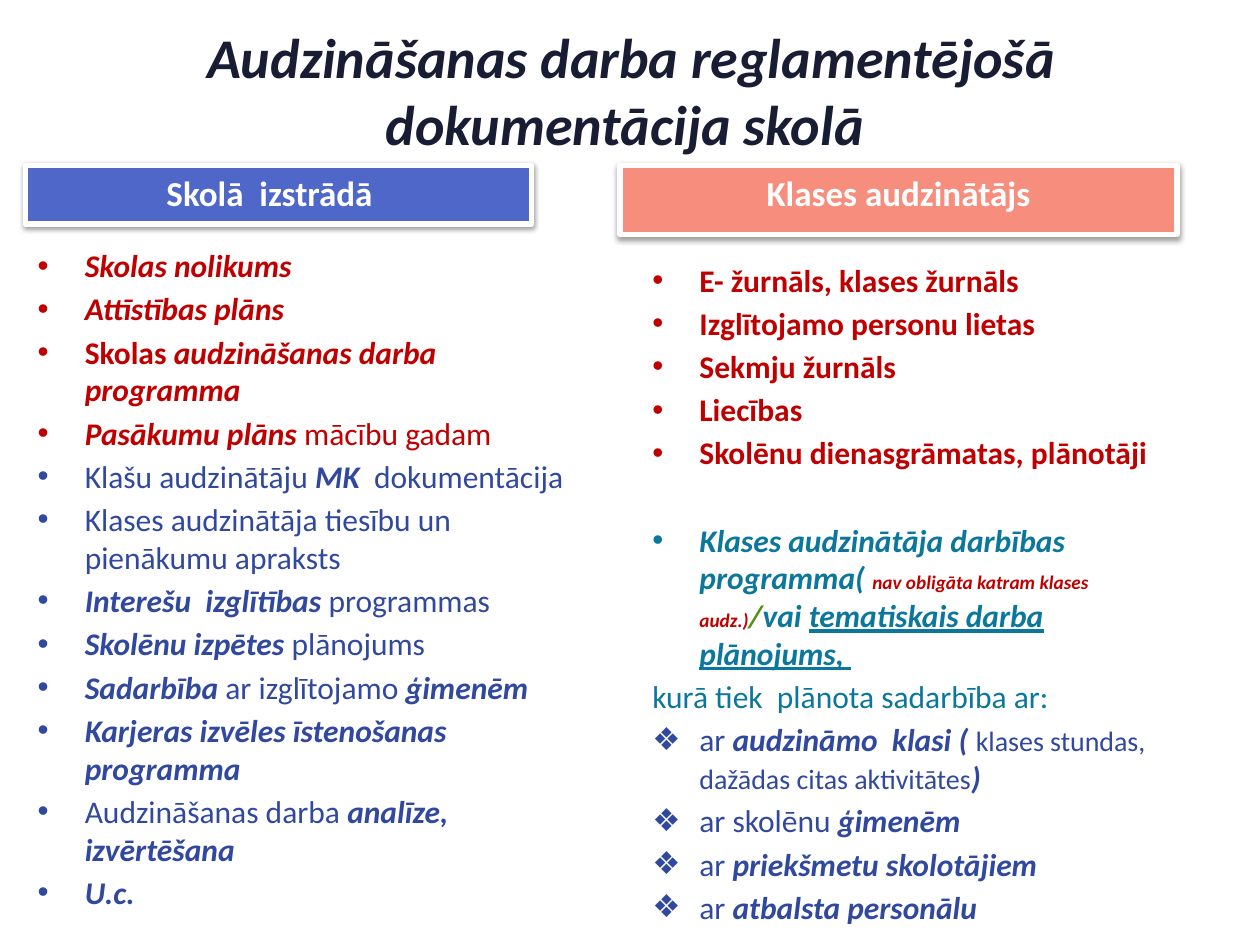
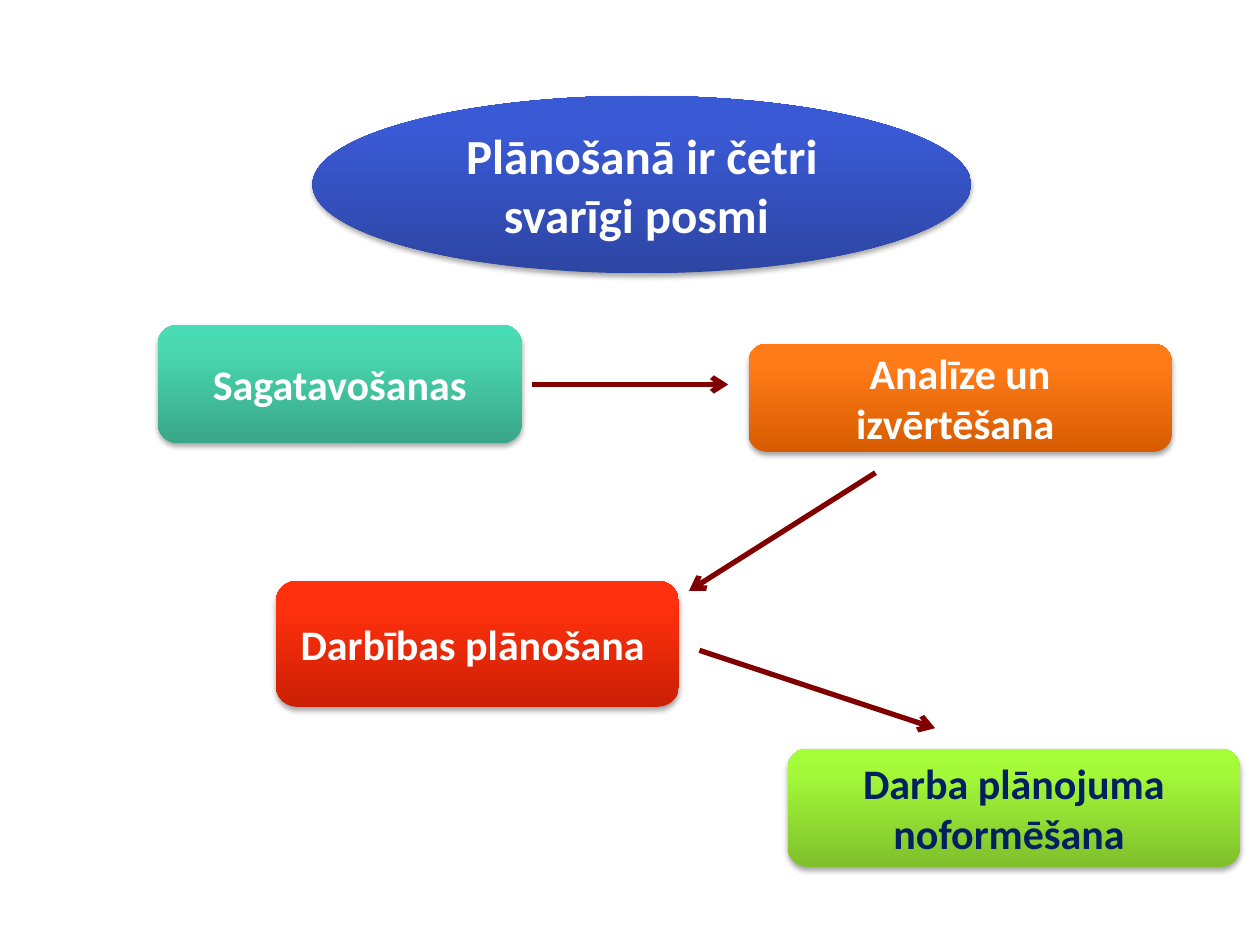
from dataclasses import dataclass
from functools import partial

from lxml import etree
from pptx import Presentation
from pptx.dml.color import RGBColor
from pptx.enum.shapes import MSO_CONNECTOR, MSO_SHAPE
from pptx.enum.text import MSO_ANCHOR, PP_ALIGN
from pptx.oxml.ns import qn
from pptx.util import Cm, Pt

RECTANGLE, ELLIPSE, ROUNDED = MSO_SHAPE.RECTANGLE, MSO_SHAPE.OVAL, MSO_SHAPE.ROUNDED_RECTANGLE
STRAIGHT = MSO_CONNECTOR.STRAIGHT
LEFT, CENTER = PP_ALIGN.LEFT, PP_ALIGN.CENTER
TOP, MIDDLE = MSO_ANCHOR.TOP, MSO_ANCHOR.MIDDLE

FONT = "Calibri"
COLORS = {
    "title": "191D34",
    "white": "FFFFFF",
    "black": "000000",
    "red": "C00000",
    "blue": "31489F",
    "teal": "0C779D",
    "green": "568D11",
    "navy": "002060",
    "arrow": "800000",
    "school": "4E67C8",
    "teacher": "F78D7C",
}
GRADIENTS = {
    "blue": ("2D45A3", "3A59D4", "3758D7"),
    "mint": ("39A688", "4AD8B1", "47DCB3"),
    "orange": ("D75C00", "FF7B18", "FF7C19"),
    "red": ("CB2004", "FF300D", "FF310F"),
    "lime": ("7FC02C", "A4F939", "A6FE36"),
}
GRADIENT_STOPS = (0, 80, 100)
HANGING = 0.95
ITEM_GAP = 3.1
SECTION_GAP = 28.2
DOT, DIAMOND = "•", "❖"


@dataclass(frozen=True)
class Box:
    """Position and size in centimetres."""
    left: float
    top: float
    width: float
    height: float

    def lengths(self) -> tuple:
        return Cm(self.left), Cm(self.top), Cm(self.width), Cm(self.height)


@dataclass(frozen=True)
class Run:
    text: str
    color: str
    bold: bool = False
    italic: bool = False
    size: float = 18
    underline: bool = False


@dataclass(frozen=True)
class Item:
    runs: tuple
    bullet: str = DOT
    gap: float = ITEM_GAP


@dataclass(frozen=True)
class Caption:
    box: Box
    text: str
    fill: str
    right_inset: float = 0.25


@dataclass(frozen=True)
class Stage:
    box: Box
    text: str
    gradient: str
    preset: int = ROUNDED
    size: float = 24
    color: str = "white"


@dataclass(frozen=True)
class Arrow:
    start: tuple
    end: tuple


def rgb(name: str) -> RGBColor:
    return RGBColor.from_string(COLORS[name])


def add_element(parent, tag: str, **attributes):
    return etree.SubElement(parent, qn(tag), attributes)


def add_run(paragraph, run: Run) -> None:
    text_run = paragraph.add_run()
    text_run.text = run.text
    font = text_run.font
    font.name, font.size = FONT, Pt(run.size)
    font.bold, font.italic, font.underline = run.bold, run.italic, run.underline
    font.color.rgb = rgb(run.color)


def write_line(shape, run: Run, anchor=TOP) -> None:
    """Put one centred paragraph into the shape."""
    frame = shape.text_frame
    frame.word_wrap = True
    frame.vertical_anchor = anchor
    paragraph = frame.paragraphs[0]
    paragraph.alignment = CENTER
    add_run(paragraph, run)


def add_title(slide, box: Box, text: str) -> None:
    shape = slide.shapes.add_textbox(*box.lengths())
    write_line(shape, Run(text, "title", True, True, 32))


def set_shadow(shape, opacity: int, distance: float) -> None:
    shape.shadow.inherit = False
    effects = shape._element.spPr.find(qn("a:effectLst"))
    shadow = add_element(effects, "a:outerShdw", blurRad=str(Pt(3.1)), dist=str(Pt(distance)),
                         dir="5400000", rotWithShape="0")
    color = add_element(shadow, "a:srgbClr", val=COLORS["black"])
    add_element(color, "a:alpha", val=str(opacity * 1000))


def set_gradient(shape, name: str) -> None:
    shape.fill.gradient()
    shape.fill.gradient_angle = 90
    stops = shape._element.spPr.find(qn("a:gradFill")).find(qn("a:gsLst"))
    for stop in list(stops):
        stops.remove(stop)
    for position, color in zip(GRADIENT_STOPS, GRADIENTS[name]):
        stop = add_element(stops, "a:gs", pos=str(position * 1000))
        add_element(stop, "a:srgbClr", val=color)


def add_caption(slide, caption: Caption) -> None:
    shape = slide.shapes.add_shape(RECTANGLE, *caption.box.lengths())
    shape.fill.solid()
    shape.fill.fore_color.rgb = rgb(caption.fill)
    shape.line.color.rgb = rgb("white")
    shape.line.width = Pt(3)
    set_shadow(shape, 38, 1.6)
    shape.text_frame.margin_right = Cm(caption.right_inset)
    write_line(shape, Run(caption.text, "white", True, size=20))


def add_list(slide, box: Box, items: tuple) -> None:
    frame = slide.shapes.add_textbox(*box.lengths()).text_frame
    frame.word_wrap = True
    for index, item in enumerate(items):
        paragraph = frame.add_paragraph() if index else frame.paragraphs[0]
        paragraph.alignment = LEFT
        paragraph.space_before = Pt(item.gap if index else 0)
        properties = paragraph._p.get_or_add_pPr()
        properties.set("marL", str(Cm(HANGING)))
        properties.set("indent", str(-Cm(HANGING)))
        if item.bullet:
            add_element(properties, "a:buFont", typeface="Arial")
            add_element(properties, "a:buChar", char=item.bullet)
        else:
            add_element(properties, "a:buNone")
        for run in item.runs:
            add_run(paragraph, run)


def add_stage(slide, stage: Stage) -> None:
    shape = slide.shapes.add_shape(stage.preset, *stage.box.lengths())
    set_gradient(shape, stage.gradient)
    shape.line.fill.background()
    set_shadow(shape, 35, 1.8)
    write_line(shape, Run(stage.text, stage.color, True, size=stage.size), MIDDLE)


def add_arrow(slide, arrow: Arrow) -> None:
    points = [Cm(value) for value in arrow.start + arrow.end]
    connector = slide.shapes.add_connector(STRAIGHT, *points)
    connector.line.color.rgb = rgb("arrow")
    connector.line.width = Pt(3)
    add_element(connector.line._get_or_add_ln(), "a:tailEnd", type="arrow")
    add_element(connector._element.spPr, "a:effectLst")


red_bold = partial(Run, color="red", bold=True)
red_strong = partial(Run, color="red", bold=True, italic=True)
teal_strong = partial(Run, color="teal", bold=True, italic=True)
blue = partial(Run, color="blue")
blue_strong = partial(Run, color="blue", bold=True, italic=True)

TITLE = "Audzināšanas darba reglamentējošā dokumentācija skolā "
CAPTIONS = (
    Caption(Box(12.5, 3.33, 11.23, 1.4), "Klases audzinātājs", "teacher"),
    Caption(Box(0.51, 3.33, 10.21, 1.19), "Skolā  izstrādā", "school", 0.61),
)
SCHOOL_ITEMS = (
    Item((red_strong("Skolas nolikums"),)),
    Item((red_strong("Attīstības plāns"),)),
    Item((red_bold("Skolas "), red_strong("audzināšanas darba programma"))),
    Item((red_strong("Pasākumu plāns "), Run("mācību gadam", "red"))),
    Item((blue("Klašu audzinātāju "), blue_strong("MK  "), blue("dokumentācija"))),
    Item((blue("Klases audzinātāja tiesību un pienākumu apraksts"),)),
    Item((blue_strong("Interešu  izglītības "), blue("programmas"))),
    Item((blue_strong("Skolēnu izpētes "), blue("plānojums"))),
    Item((blue_strong("Sadarbība"), blue(" ar izglītojamo "), blue_strong("ģimenēm"))),
    Item((blue_strong("Karjeras izvēles īstenošanas programma"),)),
    Item((blue("Audzināšanas darba "), blue_strong("analīze, izvērtēšana"))),
    Item((blue_strong("U.c."),)),
)
TEACHER_ITEMS = (
    Item((red_bold("E- žurnāls, klases žurnāls"),)),
    Item((red_bold("Izglītojamo personu lietas"),)),
    Item((red_bold("Sekmju žurnāls"),)),
    Item((red_bold("Liecības"),)),
    Item((red_bold("Skolēnu dienasgrāmatas, plānotāji"),)),
    Item((
        teal_strong("Klases audzinātāja darbības programma( "),
        red_strong("nav obligāta katram klases audz.)", size=11),
        Run("/", "green", True, True),
        teal_strong("vai "),
        teal_strong("tematiskais darba plānojums, ", underline=True),
    ), gap=SECTION_GAP),
    Item((Run("kurā tiek  plānota sadarbība ar:", "teal"),), bullet=""),
    Item((
        blue("ar "),
        blue_strong("audzināmo  klasi ( "),
        blue("klases stundas, dažādas citas aktivitātes", size=16),
        blue_strong(")"),
    ), DIAMOND),
    Item((blue("ar skolēnu "), blue_strong("ģimenēm")), DIAMOND),
    Item((blue("ar "), blue_strong("priekšmetu skolotājiem")), DIAMOND),
    Item((blue("ar "), blue_strong("atbalsta personālu")), DIAMOND),
)
STAGES = (
    Stage(Box(6.3, 1.93, 13.28, 3.58), "Plānošanā ir četri svarīgi posmi ", "blue", ELLIPSE, 28),
    Stage(Box(3.18, 6.55, 7.34, 2.39), "Sagatavošanas", "mint"),
    Stage(Box(15.09, 6.93, 8.53, 2.18), "Analīze un izvērtēšana ", "orange"),
    Stage(Box(5.56, 11.71, 8.13, 2.54), "Darbības plānošana ", "red"),
    Stage(Box(15.88, 15.09, 9.12, 2.39), "Darba plānojuma noformēšana ", "lime", color="navy"),
)
ARROWS = (
    Arrow((10.72, 7.75), (14.68, 7.75)),
    Arrow((17.65, 9.53), (13.89, 11.91)),
    Arrow((14.1, 13.11), (18.85, 14.68)),
)


def build_documents_slide(slide) -> None:
    add_title(slide, Box(1.3, 0.33, 22.86, 1.75), TITLE)
    for caption in CAPTIONS:
        add_caption(slide, caption)
    add_list(slide, Box(0.51, 4.84, 11.23, 12.5), SCHOOL_ITEMS)
    add_list(slide, Box(12.9, 5.13, 11.23, 11), TEACHER_ITEMS)


def build_stages_slide(slide) -> None:
    for stage in STAGES:
        add_stage(slide, stage)
    for arrow in ARROWS:
        add_arrow(slide, arrow)


def main() -> None:
    presentation = Presentation()
    presentation.slide_width, presentation.slide_height = Cm(25.4), Cm(19.05)
    blank_layout = presentation.slide_layouts[6]
    for build in (build_documents_slide, build_stages_slide):
        build(presentation.slides.add_slide(blank_layout))
    presentation.save("out.pptx")


if __name__ == "__main__":
    main()
